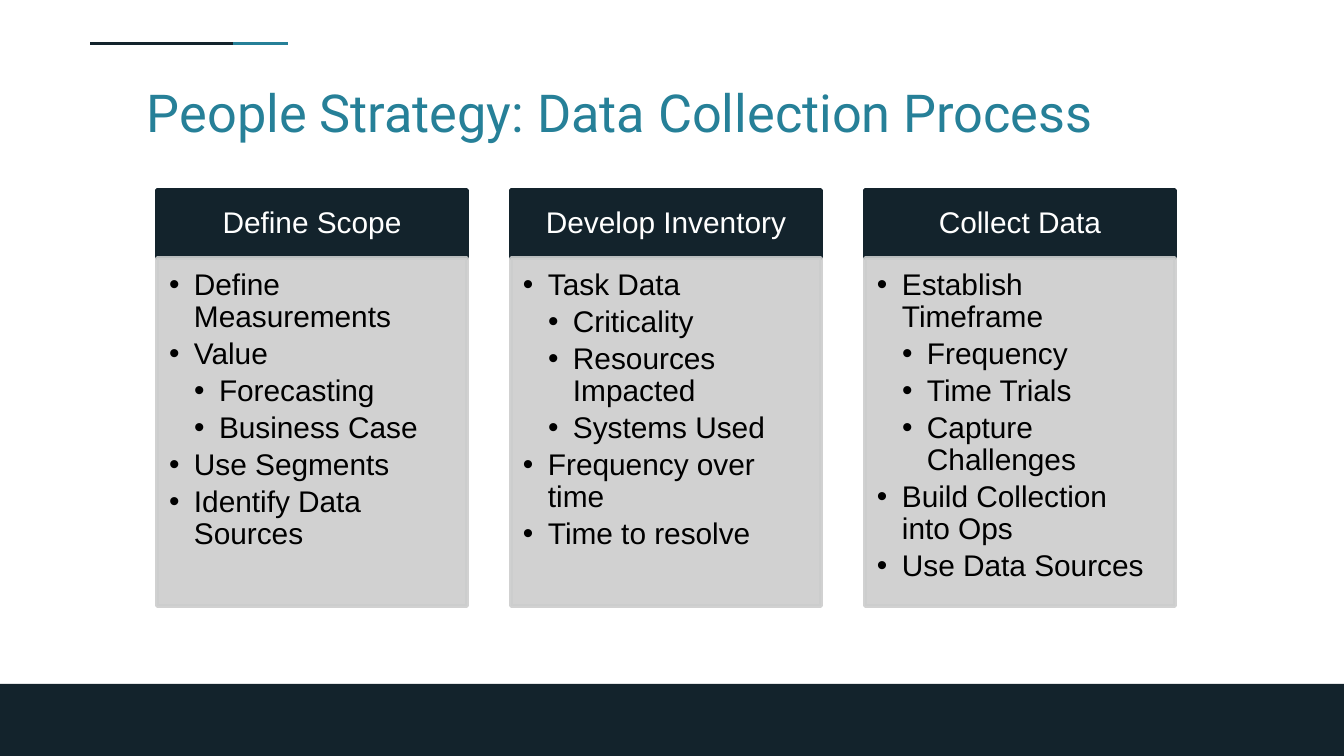
from dataclasses import dataclass

from lxml.etree import SubElement
from pptx import Presentation
from pptx.dml.color import RGBColor
from pptx.enum.shapes import MSO_SHAPE
from pptx.enum.text import MSO_ANCHOR, PP_ALIGN
from pptx.oxml.ns import qn
from pptx.util import Inches, Pt

SCALE = Inches(10) / 1344
INDENT = 25


@dataclass(frozen=True)
class Theme:
    dark: str = "13232C"
    teal: str = "268098"
    panel: str = "CCCDCD"
    white: str = "FFFFFF"
    black: str = "000000"
    title_font: str = "Roboto"
    body_font: str = "Arial"
    title_size: int = 28
    body_size: int = 16


THEME = Theme()

COLUMNS = [
    ("Define Scope", [
        (0, "Define Measurements"),
        (0, "Value"),
        (1, "Forecasting"),
        (1, "Business Case"),
        (0, "Use Segments"),
        (0, "Identify Data Sources"),
    ]),
    ("Develop Inventory", [
        (0, "Task Data"),
        (1, "Criticality"),
        (1, "Resources Impacted"),
        (1, "Systems Used"),
        (0, "Frequency over time"),
        (0, "Time to resolve"),
    ]),
    ("Collect Data", [
        (0, "Establish Timeframe"),
        (1, "Frequency"),
        (1, "Time Trials"),
        (1, "Capture Challenges"),
        (0, "Build Collection into Ops"),
        (0, "Use Data Sources"),
    ]),
]


def px(value):
    return round(value * SCALE)


def apply_format(target, values):
    for name, value in values.items():
        setattr(target, name, value)


def set_frame(text_frame, anchor, margins):
    sides = ("margin_left", "margin_top", "margin_right", "margin_bottom")
    apply_format(text_frame, {"word_wrap": True, "vertical_anchor": anchor})
    apply_format(text_frame, dict(zip(sides, map(px, margins))))


def write_text(paragraph, text, font_name, size, color, **paragraph_format):
    apply_format(paragraph, paragraph_format)
    run = paragraph.add_run()
    run.text = text
    apply_format(run.font, {"name": font_name, "size": Pt(size)})
    run.font.color.rgb = RGBColor.from_string(color)


def add_bullet(paragraph, level, color):
    paragraph.level = level
    properties = paragraph._p.get_or_add_pPr()
    properties.set("marL", str(px(INDENT * (level + 1))))
    properties.set("indent", str(px(-INDENT)))
    bullet_color = SubElement(properties, qn("a:buClr"))
    SubElement(bullet_color, qn("a:srgbClr"), val=color)
    SubElement(properties, qn("a:buFont"), typeface="Arial")
    SubElement(properties, qn("a:buChar"), char="•")


def add_block(slide, left, top, width, height, color, line_width=0, opacity=100):
    shape = slide.shapes.add_shape(
        MSO_SHAPE.RECTANGLE, px(left), px(top), px(width), px(height))
    shape.shadow.inherit = False
    fills = [shape.fill]
    if line_width:
        shape.line.width = Pt(line_width)
        fills.append(shape.line.fill)
    else:
        shape.line.fill.background()
    for fill in fills:
        fill.solid()
        fill.fore_color.rgb = RGBColor.from_string(color)
    if opacity < 100:
        for color_element in shape._element.spPr.iter(qn("a:srgbClr")):
            SubElement(color_element, qn("a:alpha"), val=str(opacity * 1000))
    return shape


def add_title(slide, text):
    title = slide.shapes.title
    apply_format(title, {"left": px(134), "top": px(67),
                         "width": px(1064), "height": px(85)})
    set_frame(title.text_frame, MSO_ANCHOR.TOP, (13, 13, 13, 13))
    write_text(title.text_frame.paragraphs[0], text, THEME.title_font,
               THEME.title_size, THEME.teal, alignment=PP_ALIGN.LEFT)


def add_column(slide, left, heading, items):
    width = 310
    header = add_block(slide, left, 190, width, 68, THEME.dark, line_width=2)
    set_frame(header.text_frame, MSO_ANCHOR.MIDDLE, (16, 9, 16, 9))
    write_text(header.text_frame.paragraphs[0], heading, THEME.body_font,
               THEME.body_size, THEME.white,
               alignment=PP_ALIGN.CENTER, line_spacing=0.9)

    panel = add_block(slide, left, 258, width, 348, THEME.panel,
                      line_width=2, opacity=90)
    text_frame = panel.text_frame
    set_frame(text_frame, MSO_ANCHOR.TOP, (12, 12, 16, 18))
    for index, (level, text) in enumerate(items):
        paragraph = text_frame.add_paragraph() if index else text_frame.paragraphs[0]
        add_bullet(paragraph, level, THEME.black)
        write_text(paragraph, text, THEME.body_font, THEME.body_size, THEME.black,
                   alignment=PP_ALIGN.LEFT, line_spacing=0.9, space_after=Pt(2.5))


def main():
    presentation = Presentation()
    apply_format(presentation, {"slide_width": px(1344), "slide_height": px(756)})
    slide = presentation.slides.add_slide(presentation.slide_layouts[5])

    add_block(slide, 0, 684, 1344, 72, THEME.dark)
    for left, color in ((145, THEME.teal), (90, THEME.dark)):
        add_block(slide, left, 42, 143, 3, color)
    add_title(slide, "People Strategy: Data Collection Process")
    for index, (heading, items) in enumerate(COLUMNS):
        add_column(slide, 157 + 354 * index, heading, items)

    presentation.save("out.pptx")


if __name__ == "__main__":
    main()
